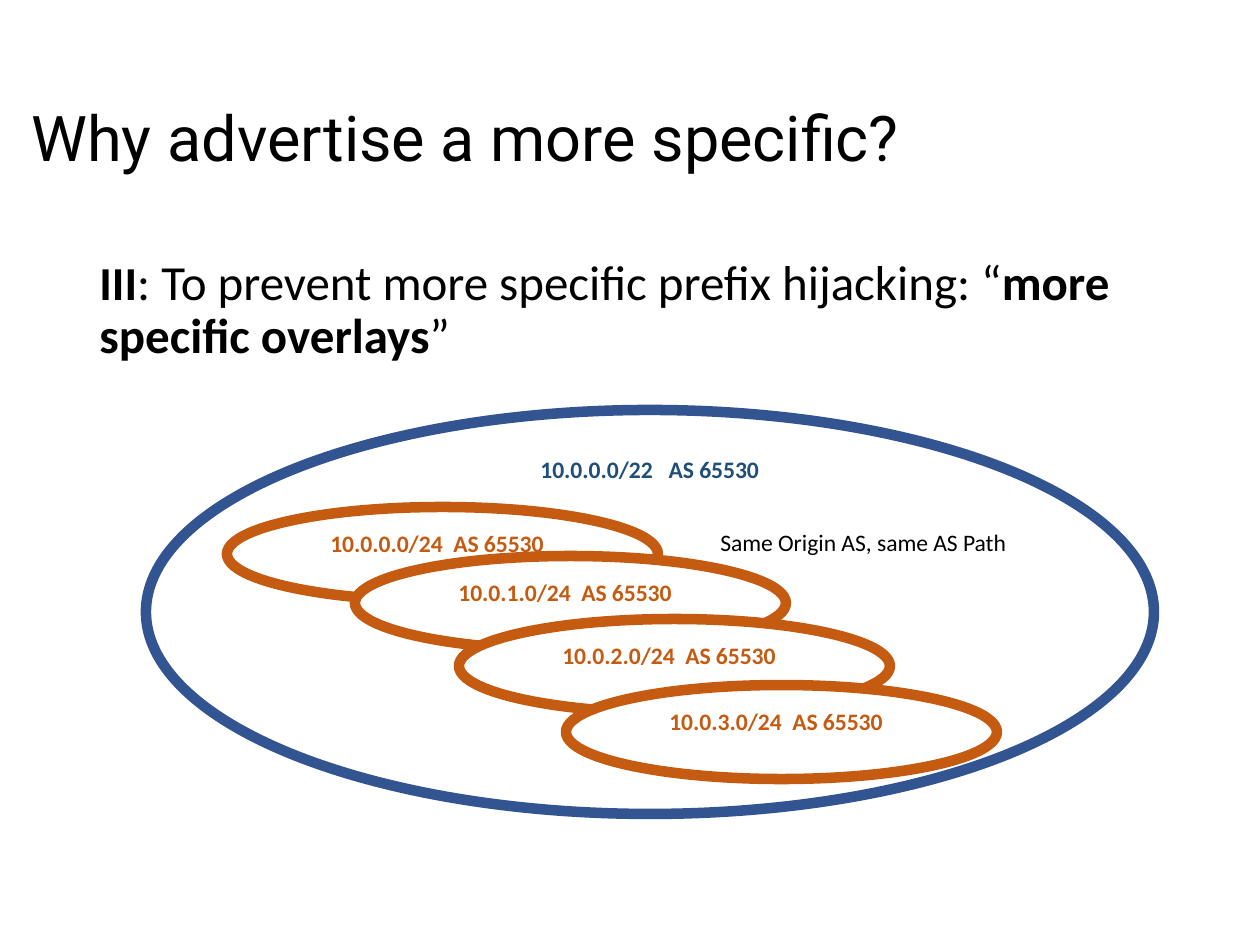
from pptx import Presentation
from pptx.dml.color import RGBColor
from pptx.enum.shapes import MSO_SHAPE as Shape
from pptx.enum.text import MSO_ANCHOR as Anchor
from pptx.util import Emu, Pt

PX_PER_INCH = 126
BLACK, WHITE = "000000", "FFFFFF"
NAVY, BLUE, ORANGE = "1F4E79", "325491", "C55A11"
AGGREGATE = "10.0.0.0/22   AS 65530"
# Offset of each more specific prefix inside the aggregate
SPECIFICS = [
    ("10.0.0.0/24  AS 65530", 81, 97),
    ("10.0.1.0/24  AS 65530", 209, 146),
    ("10.0.2.0/24  AS 65530", 313, 209),
    ("10.0.3.0/24  AS 65530", 420, 275),
]


def px(length):
    return Emu(round(length * 914400 / PX_PER_INCH))


def color(hex_code):
    return RGBColor.from_string(hex_code)


def add_text(slide, box, runs, font="Calibri", fill=BLACK, wrap=True):
    """Add one paragraph of (text, size, bold) runs and return its frame."""
    frame = slide.shapes.add_textbox(*map(px, box)).text_frame
    frame.word_wrap = wrap
    for text, size, bold in runs:
        run = frame.paragraphs[0].add_run()
        run.text = text
        run.font.name = font
        run.font.size = Pt(size)
        run.font.bold = bold
        run.font.color.rgb = color(fill)
    return frame


def add_ellipse(slide, box, outline):
    ellipse = slide.shapes.add_shape(Shape.OVAL, *map(px, box))
    ellipse.shadow.inherit = False
    ellipse.fill.solid()
    ellipse.fill.fore_color.rgb = color(WHITE)
    ellipse.line.color.rgb = color(outline)
    ellipse.line.width = Pt(6)


def add_title(slide, box):
    frame = add_text(slide, box, [("Why advertise a more specific?", 36, False)], "Roboto")
    frame.vertical_anchor = Anchor.MIDDLE
    frame.paragraphs[0].line_spacing = 0.9


def add_reason(slide, box):
    frame = add_text(slide, box, [
        ("III", 27, True),
        (": To prevent more specific prefix hijacking: “", 28, False),
        ("more specific overlays", 28, True),
        ("”", 28, False),
    ])
    paragraph = frame.paragraphs[0]
    paragraph.line_spacing = 0.9
    paragraph.space_before = Pt(10)


def add_specific(slide, box, prefix):
    left, top, _, _ = box
    add_ellipse(slide, box, ORANGE)
    add_text(slide, (left + 91, top + 16, 242, 42), [(prefix, 13.5, True)],
             fill=ORANGE, wrap=False)


def add_overlays(slide, box):
    """Draw the aggregate prefix with its overlapping more specifics."""
    left, top, _, _ = box
    add_ellipse(slide, box, BLUE)
    add_text(slide, (left + 382, top + 39, 253, 42), [(AGGREGATE, 13.5, True)], fill=NAVY)
    for prefix, dx, dy in SPECIFICS:
        add_specific(slide, (left + dx, top + dy, 431, 94), prefix)
    add_text(slide, (left + 562, top + 112, 315, 42),
             [("Same Origin AS, same AS Path", 13.5, False)], wrap=False)


def main():
    deck = Presentation()
    deck.slide_width, deck.slide_height = px(1260), px(945)
    slide = deck.slides.add_slide(deck.slide_layouts[6])
    add_title(slide, (19, 50, 1221, 183))
    add_reason(slide, (87, 252, 1086, 600))
    add_overlays(slide, (146, 410, 1008, 404))
    deck.save("out.pptx")


if __name__ == "__main__":
    main()
